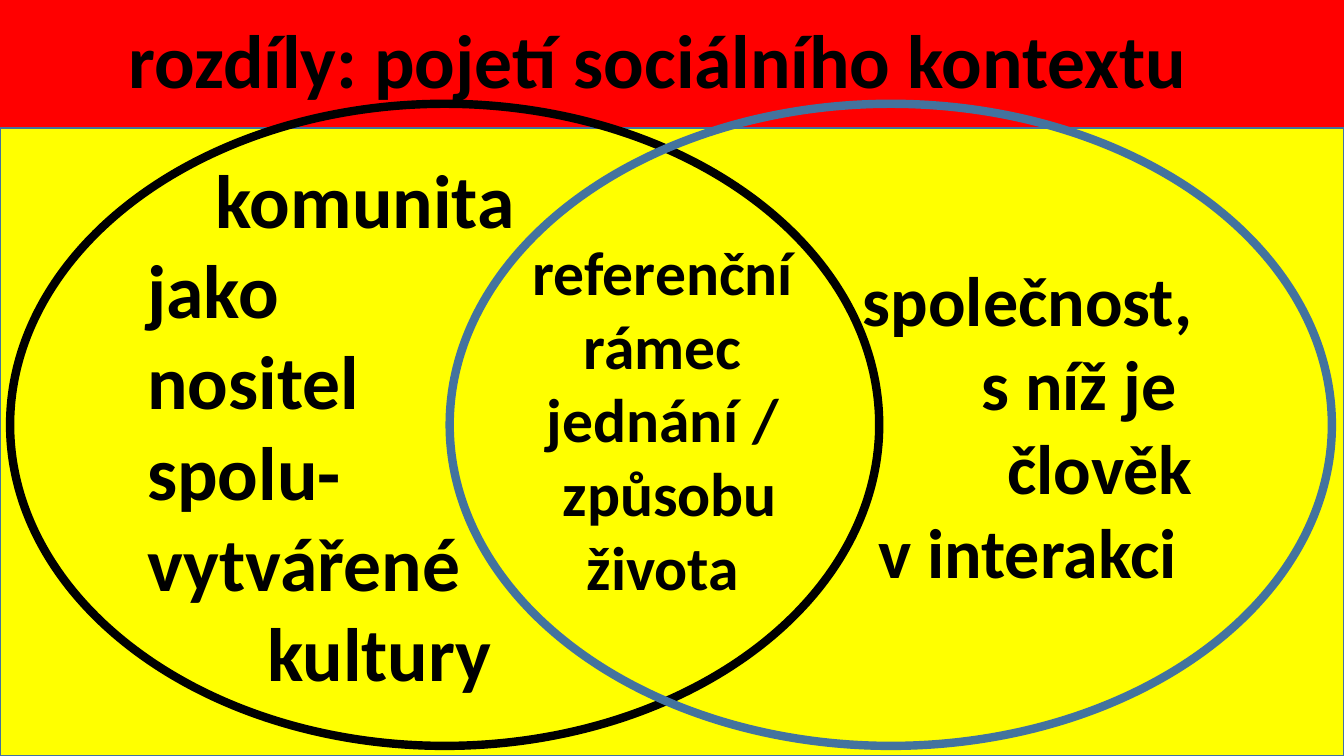
from pptx import Presentation
from pptx.dml.color import RGBColor
from pptx.enum import shapes, text
from pptx.util import Inches, Pt

LEFT, CENTER, RIGHT = text.PP_ALIGN.LEFT, text.PP_ALIGN.CENTER, text.PP_ALIGN.RIGHT
RECTANGLE, OVAL = shapes.MSO_SHAPE.RECTANGLE, shapes.MSO_SHAPE.OVAL


def add_panel(kind, box, fill=None, line=None, width=1):
    shape = slide.shapes.add_shape(kind, *map(Inches, box))
    shape.shadow.inherit = False
    for part, color in ((shape.fill, fill), (shape.line.fill, line)):
        if color:
            part.solid()
            part.fore_color.rgb = RGBColor.from_string(color)
        else:
            part.background()
    if line:
        shape.line.width = Pt(width)
    return shape


def write_lines(shape, lines, size, alignment):
    """Fill the shape with one paragraph per (wording, first-line indent) pair."""
    frame = shape.text_frame
    frame.word_wrap = True
    frame.vertical_anchor = text.MSO_ANCHOR.MIDDLE
    for number, (wording, indent) in enumerate(lines):
        paragraph = frame.paragraphs[0] if number == 0 else frame.add_paragraph()
        paragraph.text = wording
        paragraph.alignment = alignment
        paragraph.font.name = "Calibri"
        paragraph.font.size = Pt(size)
        paragraph.font.bold = True
        paragraph.font.color.rgb = RGBColor.from_string("000000")
        if indent:
            paragraph._p.get_or_add_pPr().set("indent", str(Inches(indent)))


presentation = Presentation()
presentation.slide_width = Inches(13.33)
presentation.slide_height = Inches(7.5)
slide = presentation.slides.add_slide(presentation.slide_layouts[6])

title = add_panel(RECTANGLE, (0, -0.01, 13.33, 1.28), fill="FF0000")
write_lines(title, [("rozdíly: pojetí sociálního kontextu", 0)], 54, CENTER)
title.text_frame.margin_right = Inches(0.38)
title.text_frame.paragraphs[0].line_spacing = 0.9

add_panel(RECTANGLE, (0, 1.27, 13.33, 6.23), fill="FFFF00", line="43739E")

community = add_panel(OVAL, (0.1, 1.03, 8.62, 6.37), line="000000", width=6)
write_lines(community, [
    ("komunita", 0.68), ("jako", 0), ("nositel", 0),
    ("spolu-", 0), ("vytvářené", 0), ("kultury", 1.19),
], 54, LEFT)

society = add_panel(OVAL, (4.46, 1.03, 8.75, 6.37), line="43739E", width=6)
write_lines(society, [
    ("společnost,", 0), ("s níž je ", 0), ("člověk", 0), ("v interakci ", 0),
], 50, RIGHT)

overlap = slide.shapes.add_textbox(*map(Inches, (4.59, 1.27, 3.97, 5.76)))
write_lines(overlap, [
    ("referenční", 0), ("rámec", 0), ("jednání /", 0),
    (" způsobu", 0), ("života", -0.28),
], 44, CENTER)

presentation.save("out.pptx")
